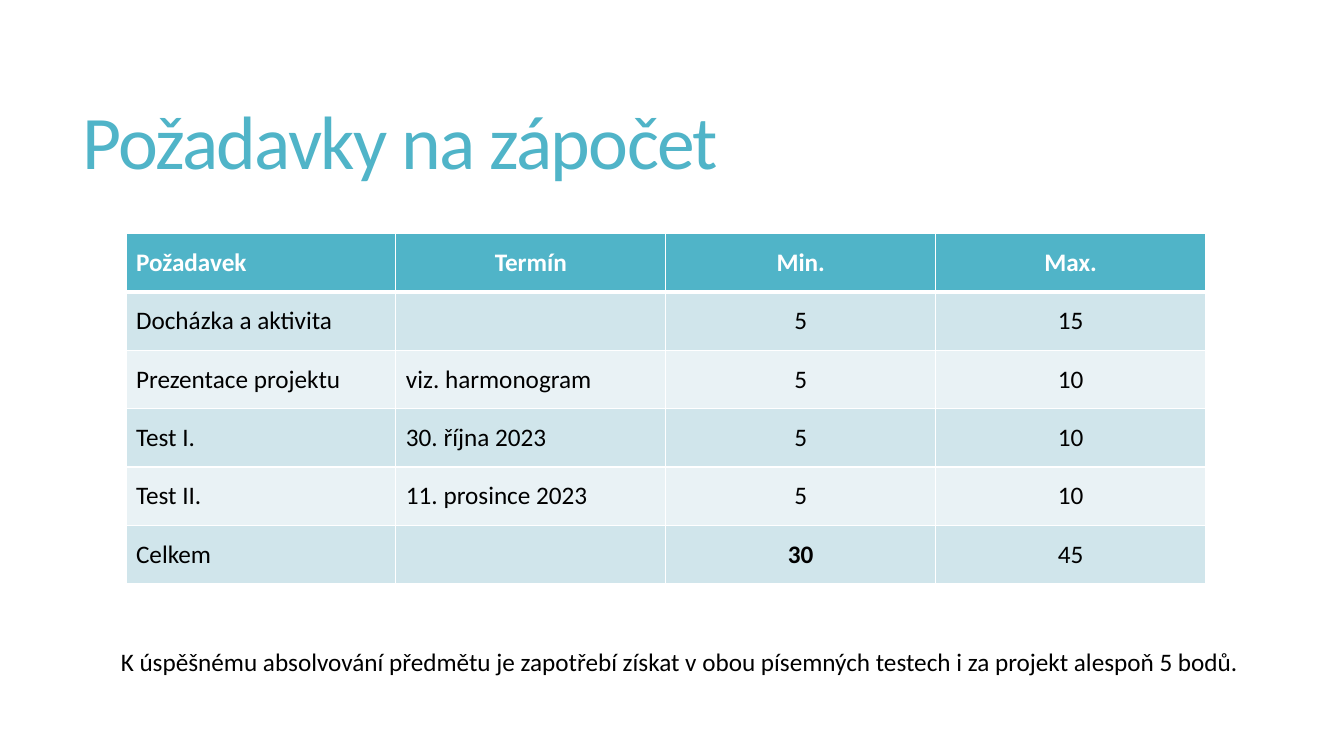
from lxml.etree import SubElement
from pptx import Presentation
from pptx.dml.color import RGBColor
from pptx.enum.text import MSO_ANCHOR as Anchor, PP_ALIGN as Align
from pptx.oxml.ns import qn
from pptx.util import Pt

# Content
TITLE = "Požadavky na zápočet"
REQUIREMENTS = [
    ("Požadavek", "Termín", "Min.", "Max."),
    ("Docházka a aktivita", "", "5", "15"),
    ("Prezentace projektu", "viz. harmonogram", "5", "10"),
    ("Test I.", "30. října 2023", "5", "10"),
    ("Test II.", "11. prosince 2023", "5", "10"),
    ("Celkem", "", "30", "45"),
]
TOTAL_MINIMUM = (len(REQUIREMENTS) - 1, 2)
NOTE = ("K úspěšnému absolvování předmětu je zapotřebí získat "
        "v obou písemných testech i za projekt alespoň 5 bodů.")

# Style
FONT = "Calibri"
TEAL = RGBColor(0x50, 0xB4, 0xC8)
BAND_DARK = RGBColor(0xD0, 0xE5, 0xEB)
BAND_LIGHT = RGBColor(0xE9, 0xF2, 0xF5)
WHITE = RGBColor(0xFF, 0xFF, 0xFF)
BLACK = RGBColor(0, 0, 0)

# Layout in points
TABLE_LEFT, TABLE_TOP = 90, 167
COLUMN_WIDTH, ROW_HEIGHT = 192.8, 41.65


def write(frame, text, size=18, color=BLACK, bold=False, align=Align.LEFT,
          anchor=Anchor.TOP, line_spacing=1.0, tracking=0):
    frame.word_wrap = True
    frame.vertical_anchor = anchor
    paragraph = frame.paragraphs[0]
    paragraph.alignment = align
    paragraph.line_spacing = line_spacing
    run = paragraph.add_run()
    run.text = text
    run.font.name, run.font.size, run.font.bold = FONT, Pt(size), bold
    run.font.color.rgb = color
    if tracking:
        run.font._element.set("spc", str(round(tracking * 100)))


def add_borders(cell, **widths):
    properties = cell._tc.get_or_add_tcPr()
    for side, width in widths.items():
        line = SubElement(properties, qn(f"a:ln{side}"), w=str(Pt(width)))
        fill = SubElement(line, qn("a:solidFill"))
        SubElement(fill, qn("a:srgbClr"), val=str(WHITE))


prs = Presentation()
prs.slide_width, prs.slide_height = Pt(960), Pt(540)
slide = prs.slides.add_slide(prs.slide_layouts[6])

# Title
title = slide.shapes.add_textbox(Pt(51.8), Pt(39.6), Pt(848.2), Pt(130.3))
write(title.text_frame, TITLE, size=54, color=TEAL, anchor=Anchor.MIDDLE,
      line_spacing=0.85, tracking=-1.2)

# Requirements table
row_count, column_count = len(REQUIREMENTS), len(REQUIREMENTS[0])
table = slide.shapes.add_table(
    row_count, column_count, Pt(TABLE_LEFT), Pt(TABLE_TOP),
    Pt(column_count * COLUMN_WIDTH), Pt(row_count * ROW_HEIGHT)).table
for column in table.columns:
    column.width = Pt(COLUMN_WIDTH)
for row in table.rows:
    row.height = Pt(ROW_HEIGHT)

for r, requirement in enumerate(REQUIREMENTS):
    header = r == 0
    band = TEAL if header else BAND_DARK if r % 2 else BAND_LIGHT
    for c, text in enumerate(requirement):
        cell = table.cell(r, c)
        add_borders(cell, L=1, R=1, T=3 if r == 1 else 1, B=3 if header else 1)
        cell.fill.solid()
        cell.fill.fore_color.rgb = band
        cell.vertical_anchor = Anchor.MIDDLE
        if text:
            centred = c >= 2 or (header and c == 1)
            write(cell.text_frame, text, color=WHITE if header else BLACK,
                  bold=header or (r, c) == TOTAL_MINIMUM,
                  align=Align.CENTER if centred else Align.LEFT,
                  anchor=Anchor.MIDDLE)

# Closing note
note = slide.shapes.add_textbox(Pt(79.2), Pt(457.9), Pt(820.8), Pt(29))
write(note.text_frame, NOTE)

prs.save("out.pptx")
